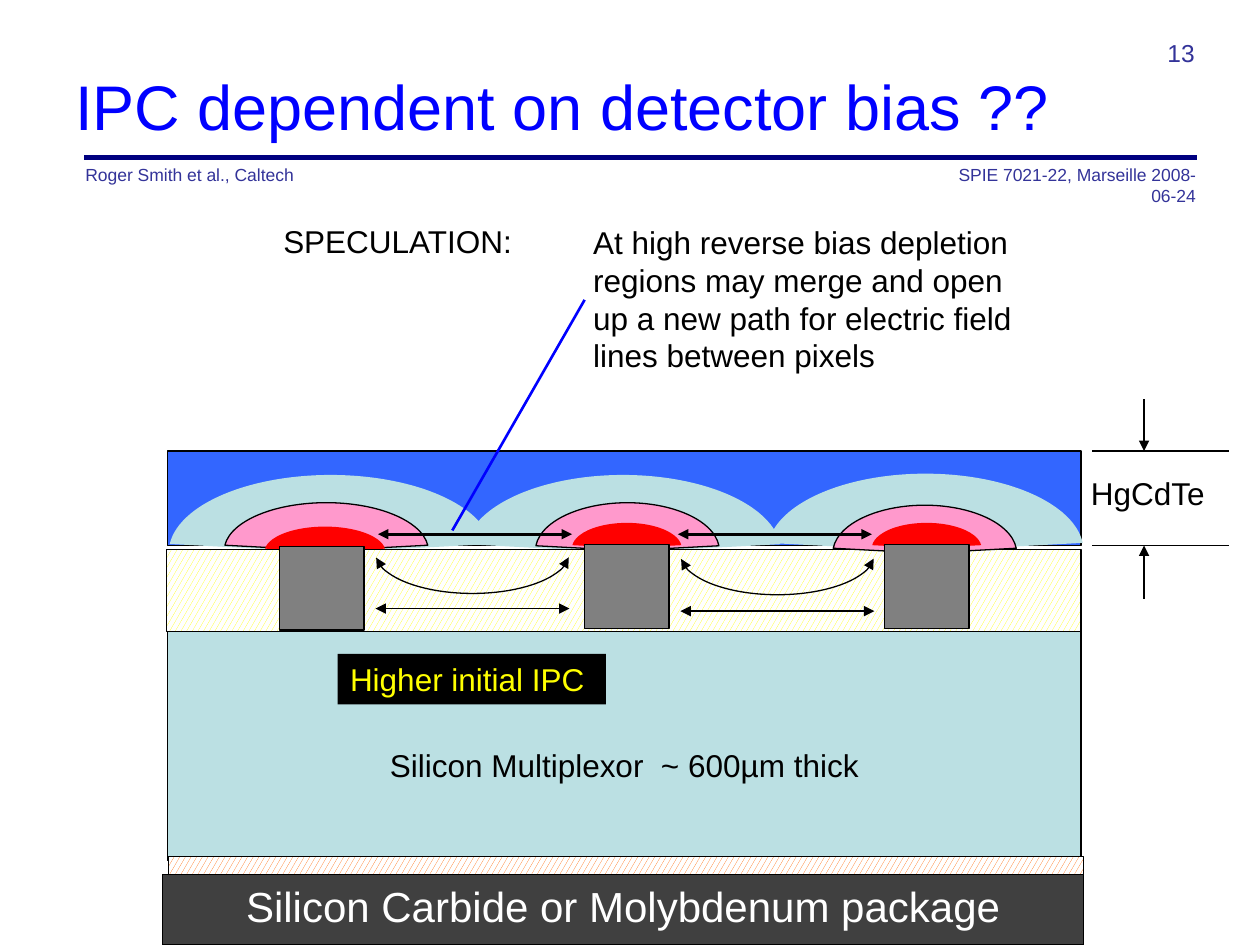
from dataclasses import dataclass
from typing import Optional

import pptx
import pptx.dml.color
import pptx.enum.dml
import pptx.enum.shapes
import pptx.enum.text
import pptx.oxml
import pptx.oxml.ns
import pptx.util
from pptx.util import Inches

RGBColor = pptx.dml.color.RGBColor
Shape = pptx.enum.shapes.MSO_SHAPE
Align = pptx.enum.text.PP_ALIGN
Anchor = pptx.enum.text.MSO_ANCHOR

BLACK = RGBColor(0x00, 0x00, 0x00)
WHITE = RGBColor(0xFF, 0xFF, 0xFF)
NAVY = RGBColor(0x00, 0x00, 0x80)
BLUE = RGBColor(0x00, 0x00, 0xFF)
INDIGO = RGBColor(0x33, 0x33, 0x99)
DETECTOR_BLUE = RGBColor(0x33, 0x66, 0xFF)
PALE_TEAL = RGBColor(0xBB, 0xE0, 0xE3)
PINK = RGBColor(0xFF, 0x99, 0xCC)
RED = RGBColor(0xFF, 0x00, 0x00)
GRAY = RGBColor(0x80, 0x80, 0x80)
CHARCOAL = RGBColor(0x40, 0x40, 0x40)
YELLOW = RGBColor(0xFF, 0xFF, 0x00)
ORANGE = RGBColor(0xFF, 0x66, 0x00)

THIN = 0.75
DOME_ADJUSTMENTS = (109.8, 214.2, 0.47)
FIELD_ARC_ADJUSTMENTS = (1.73, 106.16)


@dataclass(frozen=True)
class Box:
    left: float
    top: float
    width: float
    height: float

    def lengths(self) -> tuple:
        return tuple(Inches(v) for v in (self.left, self.top, self.width, self.height))


@dataclass(frozen=True)
class Dome:
    box: Box
    color: RGBColor
    outline: Optional[RGBColor] = None


@dataclass(frozen=True)
class Label:
    text: str
    box: Box
    size: float
    color: RGBColor = BLACK
    align: Align = Align.LEFT
    anchor: Anchor = Anchor.TOP


@dataclass(frozen=True)
class Stroke:
    start: tuple
    end: tuple
    color: RGBColor = BLACK
    width: float = THIN
    head: bool = False
    tail: bool = False


def add_arrowheads(shape, head: bool, tail: bool) -> None:
    outline = shape.element.spPr.find(pptx.oxml.ns.qn("a:ln"))
    for tag, wanted in (("headEnd", head), ("tailEnd", tail)):
        if wanted:
            outline.append(pptx.oxml.parse_xml(
                f'<a:{tag} {pptx.oxml.ns.nsdecls("a")} type="triangle"/>'))


def add_stroke(slide, stroke: Stroke) -> None:
    ends = [Inches(v) for v in (*stroke.start, *stroke.end)]
    line = slide.shapes.add_connector(pptx.enum.shapes.MSO_CONNECTOR.STRAIGHT, *ends)
    line.line.color.rgb = stroke.color
    line.line.width = pptx.util.Pt(stroke.width)
    add_arrowheads(line, stroke.head, stroke.tail)
    line.element.spPr.append(
        pptx.oxml.parse_xml(f'<a:effectLst {pptx.oxml.ns.nsdecls("a")}/>'))


def add_region(slide, kind: Shape, box: Box, fill: Optional[RGBColor],
               outline: Optional[RGBColor] = BLACK, adjustments: tuple = ()):
    region = slide.shapes.add_shape(kind, *box.lengths())
    region.shadow.inherit = False
    for index, value in enumerate(adjustments):
        region.adjustments[index] = value
    if fill is None:
        region.fill.background()
    else:
        region.fill.solid()
        region.fill.fore_color.rgb = fill
    if outline is None:
        region.line.fill.background()
    else:
        region.line.color.rgb = outline
        region.line.width = pptx.util.Pt(THIN)
    return region


def add_hatched_layer(slide, box: Box, color: RGBColor) -> None:
    layer = add_region(slide, Shape.RECTANGLE, box, WHITE)
    layer.fill.patterned()
    layer.fill.pattern = pptx.enum.dml.MSO_PATTERN.LARGE_CONFETTI
    layer.fill.fore_color.rgb = color
    layer.fill.back_color.rgb = WHITE


def add_dome(slide, dome: Dome) -> None:
    add_region(slide, Shape.BLOCK_ARC, dome.box, dome.color, dome.outline, DOME_ADJUSTMENTS)


def write(shape, label: Label) -> None:
    frame = shape.text_frame
    frame.word_wrap = True
    frame.vertical_anchor = label.anchor
    paragraph = frame.paragraphs[0]
    paragraph.text = label.text
    paragraph.alignment = label.align
    paragraph.font.name = "Arial"
    paragraph.font.size = pptx.util.Pt(label.size)
    paragraph.font.color.rgb = label.color


def add_label(slide, label: Label) -> None:
    write(slide.shapes.add_textbox(*label.box.lengths()), label)


def add_labelled_block(slide, label: Label, fill: RGBColor, outline: Optional[RGBColor] = BLACK):
    block = add_region(slide, Shape.RECTANGLE, label.box, fill, outline)
    write(block, label)
    return block


BACK_DOMES = (
    Dome(Box(3.69, 3.77, 2.51, 1.23), PALE_TEAL),
    Dome(Box(1.34, 3.77, 2.57, 1.23), PALE_TEAL),
    Dome(Box(1.78, 3.99, 1.62, 0.76), PINK, BLACK),
    Dome(Box(2.1, 4.18, 0.96, 0.4), RED),
)
FRONT_DOMES = (
    Dome(Box(4.25, 3.99, 1.46, 0.76), PINK, BLACK),
    Dome(Box(4.54, 4.15, 0.87, 0.4), RED),
    Dome(Box(6.09, 3.76, 2.51, 1.23), PALE_TEAL),
    Dome(Box(6.61, 4.01, 1.46, 0.76), PINK, BLACK),
    Dome(Box(6.92, 4.15, 0.87, 0.4), RED),
)
BUMPS = (Box(2.22, 4.34, 0.67, 0.66), Box(4.64, 4.32, 0.67, 0.67), Box(7.02, 4.32, 0.67, 0.67))
FIELD_ARCS = (Box(2.98, 4.06, 1.54, 0.65), Box(5.4, 4.07, 1.54, 0.65))

THICKNESS_MARKS = (
    *(Stroke((8.67, y), (9.75, y)) for y in (3.58, 4.33)),
    *(Stroke((9.08, start), (9.08, end), width=1.25, tail=True)
      for start, end in ((3.17, 3.58), (4.75, 4.33))),
)
FIELD_LINES = (
    *(Stroke((x, y), (x + 1.54, y), head=True, tail=True) for x, y in ((2.98, 4.83), (5.4, 4.85))),
    *(Stroke((x, 4.24), (x + 1.54, 4.24), width=1.5, head=True, tail=True) for x in (3, 5.38)),
)
LABELS = (
    Label("HgCdTe", Box(8.56, 3.71, 1.44, 0.5), 18),
    Label("SPIE 7021-22, Marseille 2008-06-24", Box(7.36, 1.25, 2.23, 0.33), 10, INDIGO, Align.RIGHT),
    Label("Roger Smith et al., Caltech", Box(0.58, 1.25, 3.17, 0.25), 10, INDIGO),
    Label("13", Box(7.5, 0.25, 2.08, 0.42), 14, INDIGO, Align.RIGHT),
    Label("IPC dependent on detector bias ??", Box(0.5, 0.42, 9.08, 0.83), 36, BLUE,
          anchor=Anchor.MIDDLE),
    Label("At high reverse bias depletion regions may merge and open up a new path "
          "for electric field lines between pixels", Box(4.61, 1.72, 3.6, 1.31), 18),
    Label("SPECULATION:", Box(2.15, 1.71, 2.1, 0.4), 18),
)
MULTIPLEXOR = Label("Silicon Multiplexor  ~ 600µm thick", Box(1.33, 5, 7.25, 1.83), 18,
                    align=Align.CENTER, anchor=Anchor.MIDDLE)
PACKAGE = Label("Silicon Carbide or Molybdenum package", Box(1.29, 6.94, 7.31, 0.56), 24,
                WHITE, Align.CENTER)
HIGHER_IPC = Label("Higher initial IPC", Box(2.68, 5.19, 2.13, 0.4), 18, YELLOW)


def main() -> None:
    deck = pptx.Presentation()
    deck.slide_width, deck.slide_height = Inches(10), Inches(7.5)
    slide = deck.slides.add_slide(deck.slide_layouts[6])

    add_stroke(slide, Stroke((0.67, 1.25), (9.5, 1.25), NAVY, 2.5))
    add_region(slide, Shape.RECTANGLE, Box(1.33, 3.58, 7.25, 0.75), DETECTOR_BLUE)
    for dome in BACK_DOMES:
        add_dome(slide, dome)
    multiplexor = add_labelled_block(slide, MULTIPLEXOR, PALE_TEAL)
    multiplexor.text_frame.margin_top = Inches(0.36)
    for mark in THICKNESS_MARKS:
        add_stroke(slide, mark)
    add_hatched_layer(slide, Box(1.32, 4.36, 7.26, 0.65), YELLOW)
    for label in LABELS:
        add_label(slide, label)
    add_labelled_block(slide, PACKAGE, CHARCOAL)
    add_hatched_layer(slide, Box(1.34, 6.8, 7.26, 0.14), ORANGE)
    add_stroke(slide, Stroke((3.59, 4.21), (4.64, 2.38), BLUE, 1.5))
    add_labelled_block(slide, HIGHER_IPC, BLACK, None)
    for dome in FRONT_DOMES:
        add_dome(slide, dome)
    for bump in BUMPS:
        add_region(slide, Shape.RECTANGLE, bump, GRAY)
    for box in FIELD_ARCS:
        arc = add_region(slide, Shape.ARC, box, None, adjustments=FIELD_ARC_ADJUSTMENTS)
        add_arrowheads(arc, head=True, tail=True)
    for line in FIELD_LINES:
        add_stroke(slide, line)

    deck.save("out.pptx")


if __name__ == "__main__":
    main()
